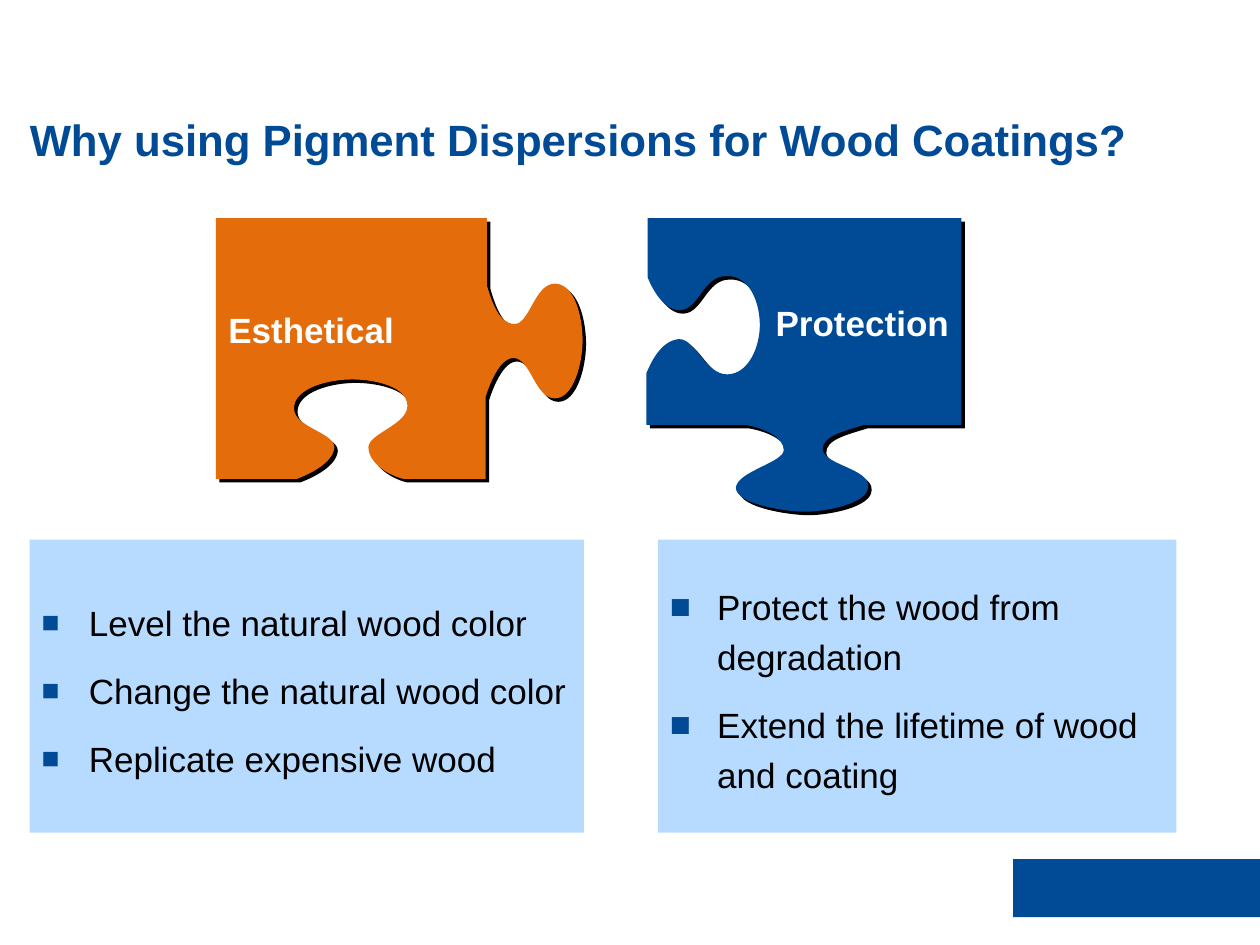
from lxml import etree
from pptx import Presentation
from pptx.dml.color import RGBColor
from pptx.enum import shapes as sh, text as tx
from pptx.oxml import ns
from pptx.util import Pt

NAVY, ORANGE, PALE, WHITE, BLACK = "004A96", "E46C0A", "B7DBFF", "FFFFFF", "000000"
GRID = Pt(0.72)

ESTHETICAL_OUTLINE = [
    (0, 0), (0, 207), (64, 207),
    (75, 203, 93, 194, 94, 182), (94, 170, 62, 166, 62, 151),
    (62, 135, 89, 128, 108, 128), (127, 128, 152, 134, 152, 149),
    (152, 164, 121, 171, 121, 182), (121, 192, 133, 203, 149, 207),
    (214, 207), (214, 142),
    (214, 142, 223, 111, 236, 111), (250, 111, 253, 143, 269, 143),
    (284, 143, 291, 115, 291, 97), (291, 79, 285, 52, 269, 52),
    (253, 52, 249, 84, 237, 84), (225, 84, 219, 67, 215, 53),
    (215, 0),
]
PROTECTION_OUTLINE = [
    (250, 164), (250, 0), (1, 0), (1, 47),
    (1, 47, 11, 74, 27, 73), (42, 72, 45, 46, 63, 46),
    (82, 45, 90, 67, 90, 85), (90, 102, 81, 124, 64, 124),
    (47, 124, 39, 96, 26, 96), (13, 97, 5, 111, 0, 123),
    (0, 164), (78, 164),
    (96, 167, 109, 175, 109, 184), (109, 194, 72, 201, 71, 214),
    (71, 227, 111, 233, 126, 233), (141, 233, 176, 227, 176, 213),
    (177, 199, 142, 196, 140, 184), (139, 173, 157, 169, 173, 164),
]


def color(value):
    """Return the colour of a hex string."""
    return RGBColor.from_string(value)


def paint(shape, fill):
    """Give a shape a plain fill without line or shadow."""
    shape.shadow.inherit = False
    shape.fill.solid()
    shape.fill.fore_color.rgb = color(fill)
    shape.line.fill.background()


def style(paragraph, size, ink, bold=False):
    """Format every run of a paragraph."""
    for run in paragraph.runs:
        run.font.name, run.font.size, run.font.bold = "Arial", Pt(size), bold
        run.font.color.rgb = color(ink)


def set_insets(frame, left, top, right, bottom):
    """Set the text margins of a frame in points."""
    frame.margin_left, frame.margin_top = Pt(left), Pt(top)
    frame.margin_right, frame.margin_bottom = Pt(right), Pt(bottom)


def add_box(slide, left, top, width, height, fill):
    """Add a plain rectangle and return it."""
    box = slide.shapes.add_shape(
        sh.MSO_SHAPE.RECTANGLE, Pt(left), Pt(top), Pt(width), Pt(height))
    paint(box, fill)
    return box


def bend(shape, segments):
    """Turn the straight sides that have control points into Bézier curves."""
    sides = list(shape._element.spPr.iter(ns.qn("a:lnTo")))
    for side, (*controls, _, _) in zip(sides, segments):
        if controls:
            side.tag = ns.qn("a:cubicBezTo")
            for index in (0, 2):
                control = etree.Element(ns.qn("a:pt"), x=str(controls[index]),
                                        y=str(controls[index + 1]))
                side.insert(index // 2, control)


def add_hard_shadow(shape):
    """Cast a sharp black shadow to the lower right."""
    effects = shape._element.spPr.find(ns.qn("a:effectLst"))
    shadow = etree.SubElement(effects, ns.qn("a:outerShdw"), blurRad="0",
                              dist=str(Pt(2.8)), dir="2700000", algn="tl", rotWithShape="0")
    etree.SubElement(shadow, ns.qn("a:srgbClr"), val=BLACK)


def add_puzzle_piece(slide, left, top, outline, fill, label, align, lift):
    """Add a labelled puzzle piece, its label raised by a bottom inset."""
    start, *segments = outline
    builder = slide.shapes.build_freeform(*start, scale=GRID)
    builder.add_line_segments([segment[-2:] for segment in segments], close=True)
    piece = builder.convert_to_shape(Pt(left), Pt(top))
    bend(piece, segments)
    paint(piece, fill)
    add_hard_shadow(piece)
    frame = piece.text_frame
    frame.word_wrap = True
    frame.vertical_anchor = tx.MSO_ANCHOR.MIDDLE
    set_insets(frame, 7.2, 3.6, 7.2, 3.6 + lift)
    frame.text = label
    frame.paragraphs[0].alignment = align
    style(frame.paragraphs[0], 20, WHITE, True)


def add_bullet(paragraph, percent):
    """Give a paragraph a hanging square bullet."""
    props = paragraph._p.get_or_add_pPr()
    props.set("marL", str(Pt(27)))
    props.set("indent", str(Pt(-27)))
    bullet_color = etree.SubElement(props, ns.qn("a:buClr"))
    etree.SubElement(bullet_color, ns.qn("a:srgbClr"), val=NAVY)
    etree.SubElement(props, ns.qn("a:buSzPct"), val=str(percent * 1000))
    etree.SubElement(props, ns.qn("a:buFont"), typeface="Arial")
    etree.SubElement(props, ns.qn("a:buChar"), char="■")


def add_benefits(slide, left, top, width, height, benefits, bullet_percent):
    """Add a pale panel with a bulleted list."""
    frame = add_box(slide, left, top, width, height, PALE).text_frame
    frame.word_wrap = True
    frame.vertical_anchor = tx.MSO_ANCHOR.MIDDLE
    set_insets(frame, 6.8, 3.6, 6.8, 3.6)
    frame.text = "\n".join(benefits)
    for paragraph in frame.paragraphs:
        add_bullet(paragraph, bullet_percent)
        paragraph.alignment = tx.PP_ALIGN.LEFT
        paragraph.line_spacing = 1.2
        paragraph.space_after = Pt(10)
        style(paragraph, 20, BLACK)


def set_title(slide, left, top, width, height, wording):
    """Place and format the title placeholder."""
    title = slide.shapes.title
    title.left, title.top, title.width, title.height = map(Pt, (left, top, width, height))
    frame = title.text_frame
    frame.word_wrap = True
    frame.vertical_anchor = tx.MSO_ANCHOR.BOTTOM
    set_insets(frame, 0, 0, 0, 0)
    frame.text = wording
    frame.paragraphs[0].alignment = tx.PP_ALIGN.LEFT
    style(frame.paragraphs[0], 25, NAVY, True)


def main():
    """Build and save the slide."""
    deck = Presentation()
    deck.slide_width, deck.slide_height = Pt(720), Pt(540)
    slide = deck.slides.add_slide(deck.slide_layouts[5])
    add_box(slide, 578.9, 491, 141.1, 33.1, NAVY)
    set_title(slide, 17, 33.8, 686.2, 60.5,
              "Why using Pigment Dispersions for Wood Coatings?")
    add_benefits(slide, 17, 308.4, 316.7, 167.4,
                 ["Level the natural wood color", "Change the natural wood color",
                  "Replicate expensive wood"], 85)
    add_puzzle_piece(slide, 123.4, 124.7, ESTHETICAL_OUTLINE, ORANGE,
                     "Esthetical", tx.PP_ALIGN.LEFT, 21.7)
    add_puzzle_piece(slide, 369.4, 124.7, PROTECTION_OUTLINE, NAVY,
                     "Protection", tx.PP_ALIGN.RIGHT, 48)
    add_benefits(slide, 376, 308.4, 296.3, 167.4,
                 ["Protect the wood from degradation",
                  "Extend the lifetime of wood and coating"], 100)
    deck.save("out.pptx")


if __name__ == "__main__":
    main()
